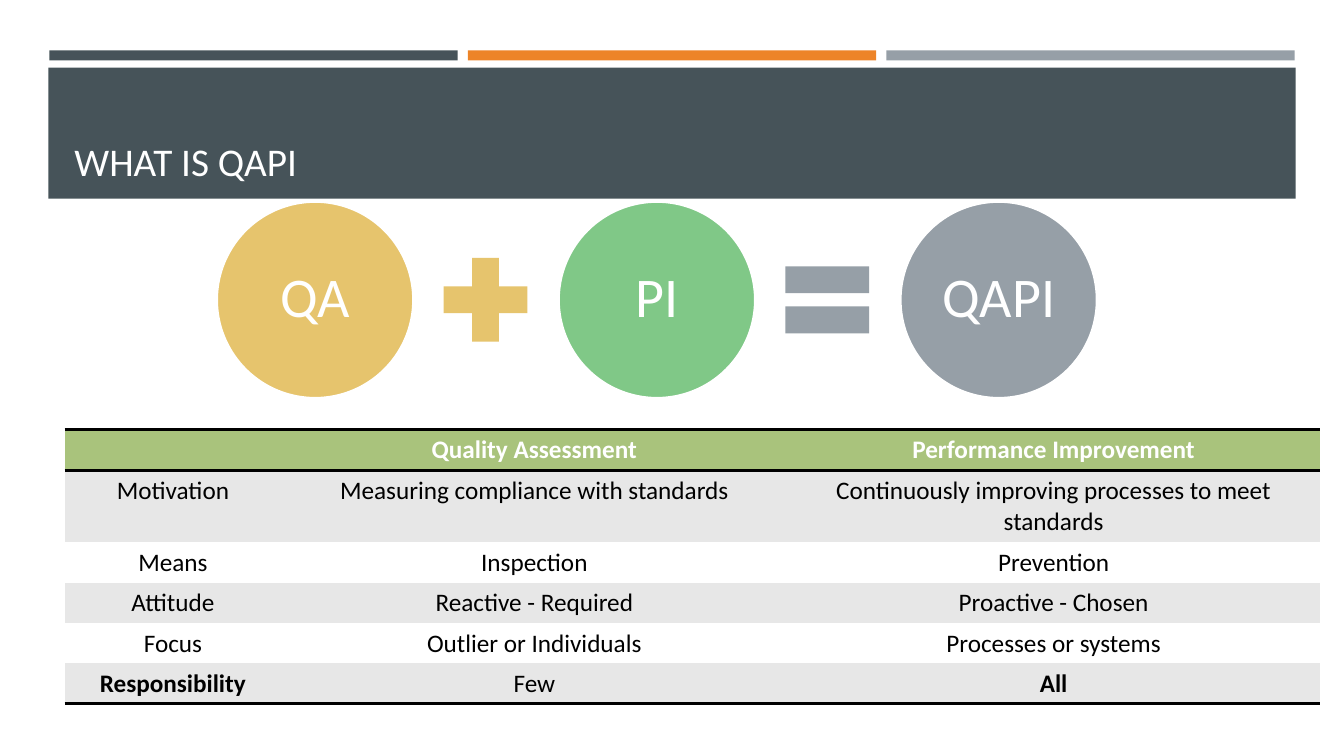
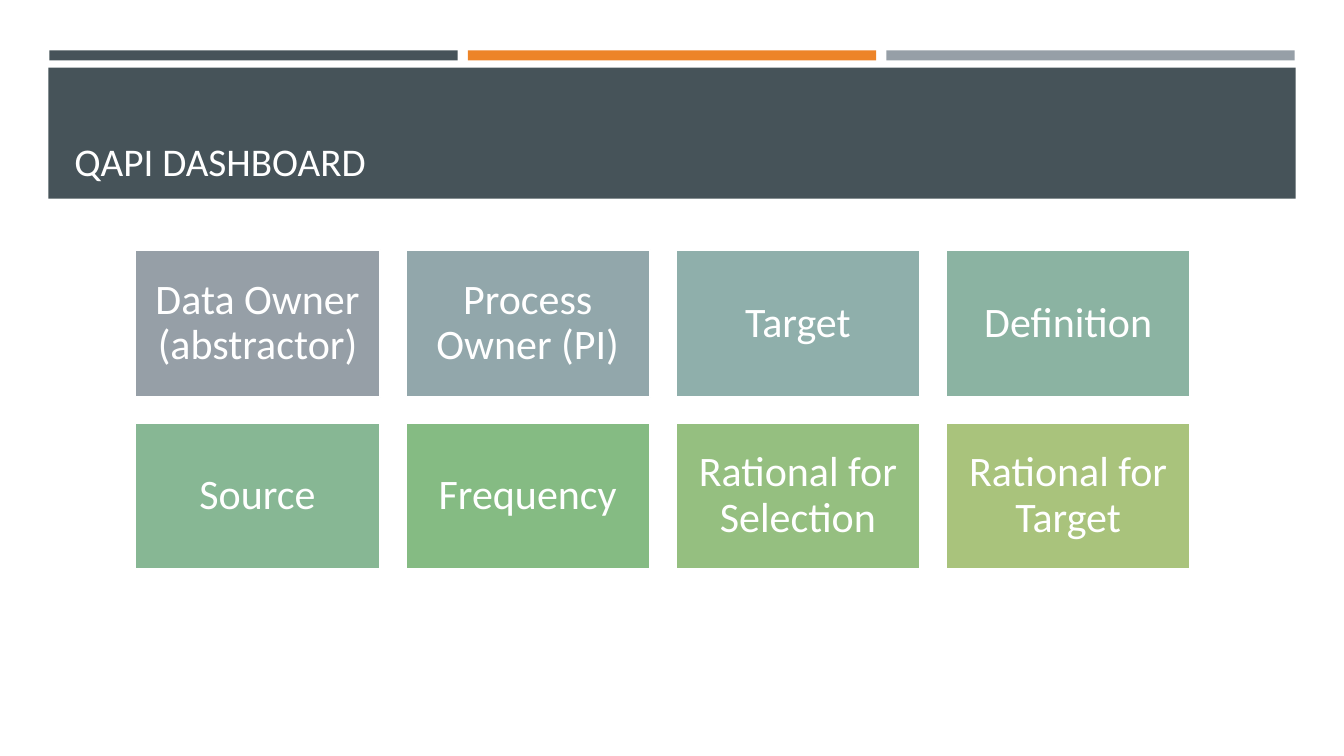
from dataclasses import dataclass

from lxml.etree import SubElement
from pptx import Presentation
from pptx.dml.color import RGBColor
from pptx.enum.shapes import MSO_SHAPE
from pptx.enum.text import MSO_ANCHOR, PP_ALIGN
from pptx.oxml.ns import qn
from pptx.util import Pt

PX = 9144  # EMU in one px, 100 px to the inch


@dataclass(frozen=True)
class Theme:
    font: str = "Calibri"
    slate: str = "465359"
    orange: str = "ED8428"
    grey: str = "969FA7"
    gold: str = "E6C46D"
    green: str = "80C887"
    olive: str = "A9C37C"
    band: str = "E7E7E7"
    white: str = "FFFFFF"
    black: str = "000000"
    title_size: int = 28
    circle_size: int = 40
    card_size: int = 30
    table_size: int = 18
    outline: float = 1.75
    rule: int = 2


theme = Theme()


def add_panel(slide, kind, box, fill, text="", size=0, inset=0):
    """Add a filled shape; one with text also gets a white outline."""
    shape = slide.shapes.add_shape(kind, *(length * PX for length in box))
    shape.shadow.inherit = False
    shape.fill.solid()
    shape.fill.fore_color.rgb = RGBColor.from_string(fill)
    if not text:
        shape.line.fill.background()
        return
    shape.line.color.rgb = RGBColor.from_string(theme.white)
    shape.line.width = Pt(theme.outline)
    frame = shape.text_frame
    frame.word_wrap = True
    frame.vertical_anchor = MSO_ANCHOR.MIDDLE
    frame.margin_left = frame.margin_right = inset * PX
    frame.margin_top = frame.margin_bottom = inset * PX
    paragraph = frame.paragraphs[0]
    paragraph.line_spacing = 0.9
    style_paragraph(paragraph, text, size, theme.white, PP_ALIGN.CENTER)


def style_paragraph(paragraph, text, size, color, align, bold=False):
    paragraph.text = text
    paragraph.alignment = align
    paragraph.font.name = theme.font
    paragraph.font.size = Pt(size)
    paragraph.font.bold = bold
    paragraph.font.color.rgb = RGBColor.from_string(color)


presentation = Presentation()
presentation.slide_width = 1333 * PX
presentation.slide_height = 750 * PX

# Shared bands and titles
slides = []
for title in ("WHAT IS QAPI", "QAPI DASHBOARD"):
    slide = presentation.slides.add_slide(presentation.slide_layouts[6])
    for index, color in enumerate((theme.slate, theme.orange, theme.grey)):
        add_panel(slide, MSO_SHAPE.RECTANGLE, (49 + 415 * index, 50, 405, 10), color)
    add_panel(slide, MSO_SHAPE.RECTANGLE, (48, 67, 1237, 130), theme.slate)
    title_box = slide.shapes.add_textbox(64 * PX, 77 * PX, 1206 * PX, 111 * PX)
    title_box.text_frame.word_wrap = True
    title_box.text_frame.vertical_anchor = MSO_ANCHOR.BOTTOM
    style_paragraph(title_box.text_frame.paragraphs[0], title,
                    theme.title_size, theme.white, PP_ALIGN.LEFT)
    slides.append(slide)
definition_slide, dashboard_slide = slides

# Equation
equation_step = 339
circles = (("QA", theme.gold), ("PI", theme.green), ("QAPI", theme.grey))
for index, (text, color) in enumerate(circles):
    add_panel(definition_slide, MSO_SHAPE.OVAL,
              (215 + equation_step * index, 200, 195, 195),
              color, text, theme.circle_size, 6)
operators = ((MSO_SHAPE.MATH_PLUS, theme.gold), (MSO_SHAPE.MATH_EQUAL, theme.grey))
for index, (kind, color) in enumerate(operators):
    add_panel(definition_slide, kind, (425 + equation_step * index, 241, 113, 113), color)

# Comparison table
rows = (
    ("", "Quality Assessment", "Performance Improvement"),
    ("Motivation", "Measuring compliance with standards",
     "Continuously improving processes to meet standards"),
    ("Means", "Inspection", "Prevention"),
    ("Attitude", "Reactive - Required", "Proactive - Chosen"),
    ("Focus", "Outlier or Individuals", "Processes or systems"),
    ("Responsibility", "Few", "All"),
)
bold_texts = {*rows[0], "Responsibility", "All"}
column_widths = (215, 502, 528)
row_heights = (41, 71, 40, 40, 40, 40)
table = definition_slide.shapes.add_table(
    len(rows), len(column_widths), 64 * PX, 426 * PX,
    sum(column_widths) * PX, sum(row_heights) * PX).table
for column, width in zip(table.columns, column_widths):
    column.width = width * PX
for row, height in zip(table.rows, row_heights):
    row.height = height * PX

for row_index, texts in enumerate(rows):
    is_header = row_index == 0
    ruled_sides = set()
    if row_index <= 1:
        ruled_sides.add("lnT")
    if row_index in (0, len(rows) - 1):
        ruled_sides.add("lnB")
    if is_header:
        fill = theme.olive
    else:
        fill = theme.band if row_index % 2 else theme.white
    for column_index, text in enumerate(texts):
        cell = table.cell(row_index, column_index)
        style_paragraph(cell.text_frame.paragraphs[0], text, theme.table_size,
                        theme.white if is_header else theme.black,
                        PP_ALIGN.CENTER, text in bold_texts)
        properties = cell._tc.get_or_add_tcPr()
        for side in ("lnL", "lnR", "lnT", "lnB"):
            border = SubElement(properties, qn(f"a:{side}"))
            if side in ruled_sides:
                border.set("w", str(Pt(theme.rule)))
                solid = SubElement(border, qn("a:solidFill"))
                SubElement(solid, qn("a:srgbClr"), val=theme.black)
            else:
                SubElement(border, qn("a:noFill"))
        cell.fill.solid()
        cell.fill.fore_color.rgb = RGBColor.from_string(fill)

# Dashboard cards
cards = (
    ("Data Owner (abstractor)", theme.grey),
    ("Process Owner (PI)", "92A7AB"),
    ("Target", "8FAFAB"),
    ("Definition", "8BB3A2"),
    ("Source", "87B794"),
    ("Frequency", "85BB83"),
    ("Rational for Selection", "95BF80"),
    ("Rational for Target", theme.olive),
)
for index, (text, color) in enumerate(cards):
    row_index, column_index = divmod(index, 4)
    add_panel(dashboard_slide, MSO_SHAPE.RECTANGLE,
              (134 + 268 * column_index, 248 + 171 * row_index, 243, 146),
              color, text, theme.card_size, 12)

presentation.save("out.pptx")
